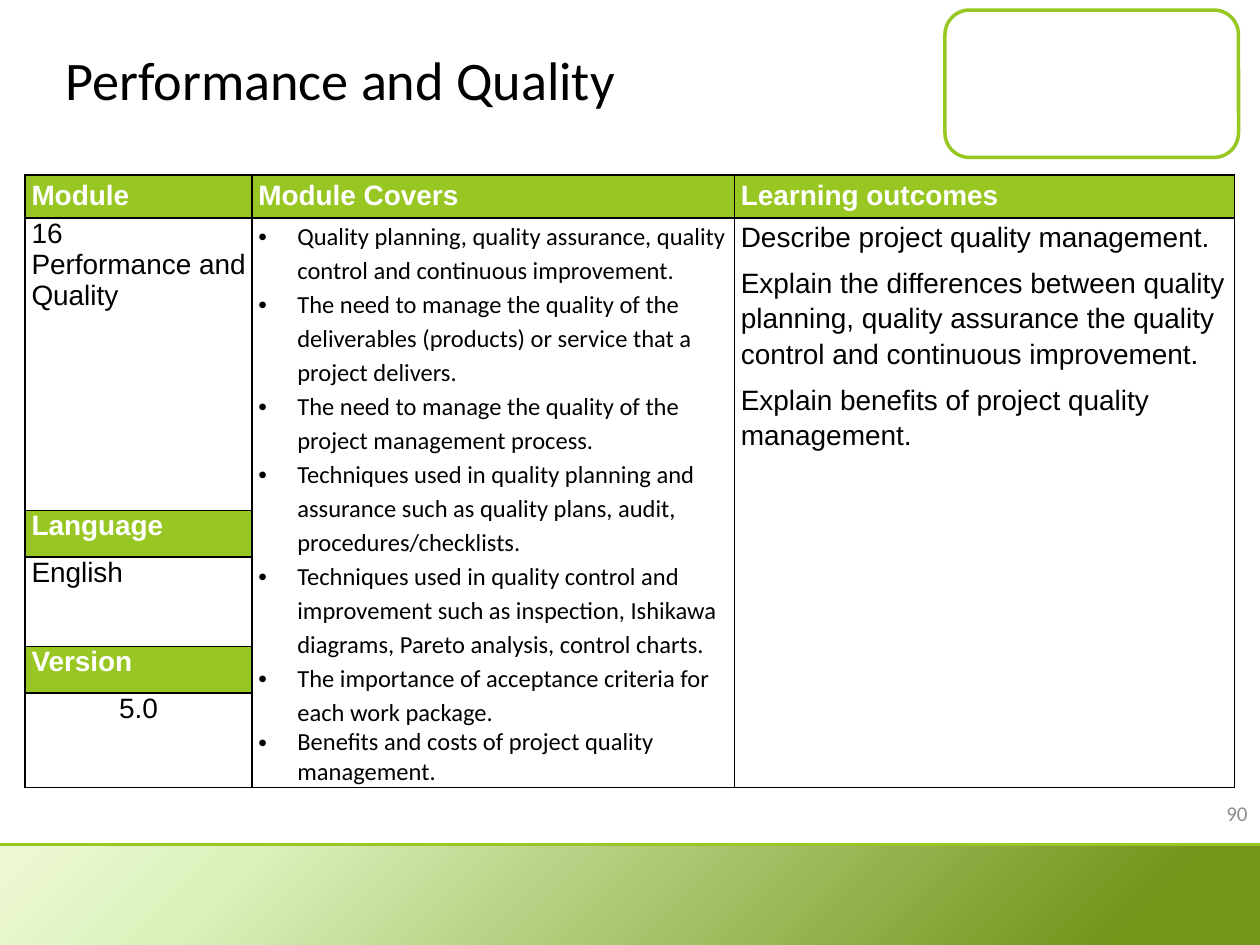
from lxml import etree
from pptx import Presentation
from pptx.dml.color import RGBColor as RGB
from pptx.enum.shapes import MSO_CONNECTOR as LINK, MSO_SHAPE as SHAPE
from pptx.enum.text import MSO_ANCHOR as ANCHOR, MSO_AUTO_SIZE as SIZE, PP_ALIGN as ALIGN
from pptx.oxml import parse_xml
from pptx.oxml.ns import nsdecls, qn
from pptx.util import Inches, Pt

HUES = {"green": "98C723", "white": "FFFFFF", "black": "000000", "grey": "8C8C8C",
        "pale": "EEF8D5", "mint": "DAF2BC", "olive": "72951A"}


def hue(name):
    return RGB.from_string(HUES[name])


def style(para, face, size, color, bold=False):
    looks = {"name": face, "size": Pt(size), "bold": bold}
    for key, value in looks.items():
        setattr(para.font, key, value)
    para.font.color.rgb = hue(color)


deck = Presentation()
deck.slide_width, deck.slide_height = Inches(10), Inches(7.5)
slide = deck.slides.add_slide(deck.slide_layouts[5])
shapes = slide.shapes

frame = shapes.add_shape(SHAPE.ROUNDED_RECTANGLE, Inches(7.5), Inches(0.08), Inches(2.33), Inches(1.17))
frame.shadow.inherit = False
frame.fill.solid()
frame.fill.fore_color.rgb = hue("white")
frame.line.color.rgb = hue("green")
frame.line.width = Pt(2)

band = shapes.add_shape(SHAPE.RECTANGLE, 0, Inches(6.71), Inches(10), Inches(0.82))
band.shadow.inherit = False
band.line.fill.background()
band.fill.gradient()
band.fill.gradient_angle = 315
stops = band._element.spPr.find(qn("a:gradFill")).find(qn("a:gsLst"))
for stop in list(stops):
    stops.remove(stop)
for spot, name in ((0, "pale"), (19, "mint"), (89, "olive")):
    stops.append(parse_xml(f'<a:gs {nsdecls("a")} pos="{spot * 1000}">'
                           f'<a:srgbClr val="{HUES[name]}"/></a:gs>'))

rule = shapes.add_connector(LINK.STRAIGHT, 0, Inches(6.7), Inches(10), Inches(6.7))
rule.line.color.rgb = hue("green")
rule.line.width = Pt(1.5)
etree.SubElement(rule._element.spPr, qn("a:effectLst"))

title = shapes.title
title.left, title.top, title.width, title.height = Inches(0.42), 0, Inches(6.75), Inches(1.25)
title.text = "Performance and Quality"
title.text_frame.auto_size = SIZE.NONE
title.text_frame.vertical_anchor = ANCHOR.MIDDLE
head = title.text_frame.paragraphs[0]
head.alignment = ALIGN.LEFT
style(head, "Calibri", 31, "black")

page = shapes.add_textbox(Inches(7.67), Inches(6.25), Inches(2.33), Inches(0.4)).text_frame
page.word_wrap = True
page.vertical_anchor = ANCHOR.MIDDLE
page.text = "90"
page.paragraphs[0].alignment = ALIGN.RIGHT
style(page.paragraphs[0], "Calibri", 12, "grey")

covers = [
    "Quality planning, quality assurance, quality control and continuous improvement.",
    "The need to manage the quality of the deliverables (products) or service that a project delivers.",
    "The need to manage the quality of the project management process.",
    "Techniques used in quality planning and assurance such as quality plans, audit, procedures/checklists.",
    "Techniques used in quality control and improvement such as inspection, Ishikawa diagrams, "
    "Pareto analysis, control charts.",
    "The importance of acceptance criteria for each work package.",
    "Benefits and costs of project quality management.",
]
goals = [
    "Describe project quality management.",
    "Explain the differences between quality planning, quality assurance the quality control "
    "and continuous improvement.",
    "Explain benefits of project quality management.",
]
texts = {
    (0, 0): ["Module"], (0, 1): ["Module Covers"], (0, 2): ["Learning outcomes"],
    (1, 0): ["16", "Performance and Quality"], (1, 1): covers, (1, 2): goals,
    (2, 0): ["Language"], (3, 0): ["English"], (4, 0): ["Version"], (5, 0): ["5.0"],
}
wide = [1.8, 3.83, 3.97]
tall = [0.34, 2.32, 0.37, 0.71, 0.37, 0.75]
grid = shapes.add_table(len(tall), len(wide), Inches(0.2), Inches(1.39),
                        Inches(sum(wide)), Inches(sum(tall))).table
grid.first_row = grid.horz_banding = False
for col, width in zip(grid.columns, wide):
    col.width = Inches(width)
for row, height in zip(grid.rows, tall):
    row.height = Inches(height)
for col in (1, 2):
    grid.cell(1, col).merge(grid.cell(5, col))

for cell in grid.iter_cells():
    props = cell._tc.get_or_add_tcPr()
    for side in ("lnL", "lnR", "lnT", "lnB"):
        props.append(parse_xml(f'<a:{side} {nsdecls("a")} w="12700"><a:solidFill>'
                               f'<a:srgbClr val="{HUES["black"]}"/></a:solidFill></a:{side}>'))
    cell.fill.background()
    cell.margin_left = cell.margin_right = Inches(0.05)
    cell.margin_top = cell.margin_bottom = 0

for (row, col), lines in texts.items():
    cell = grid.cell(row, col)
    label = row in (0, 2, 4)
    if label:
        cell.fill.solid()
        cell.fill.fore_color.rgb = hue("green")
    cell.text = "\n".join(lines)
    for i, para in enumerate(cell.text_frame.paragraphs):
        if row == 0:
            para.line_spacing = 1.15
        elif col and lines[i] != covers[-1]:
            para.line_spacing = 1.14
        if lines is goals and i:
            para.space_before = Pt(6)
        if lines is covers:
            props = para._p.get_or_add_pPr()
            props.set("marL", str(Inches(0.31)))
            props.set("indent", str(-Inches(0.31)))
            etree.SubElement(props, qn("a:buFont")).set("typeface", "Arial")
            etree.SubElement(props, qn("a:buChar")).set("char", "•")
            style(para, "Calibri", 14, "black")
        else:
            style(para, "Arial", 16, "white" if label else "black", label)
grid.cell(5, 0).text_frame.paragraphs[0].alignment = ALIGN.CENTER

deck.save("out.pptx")
